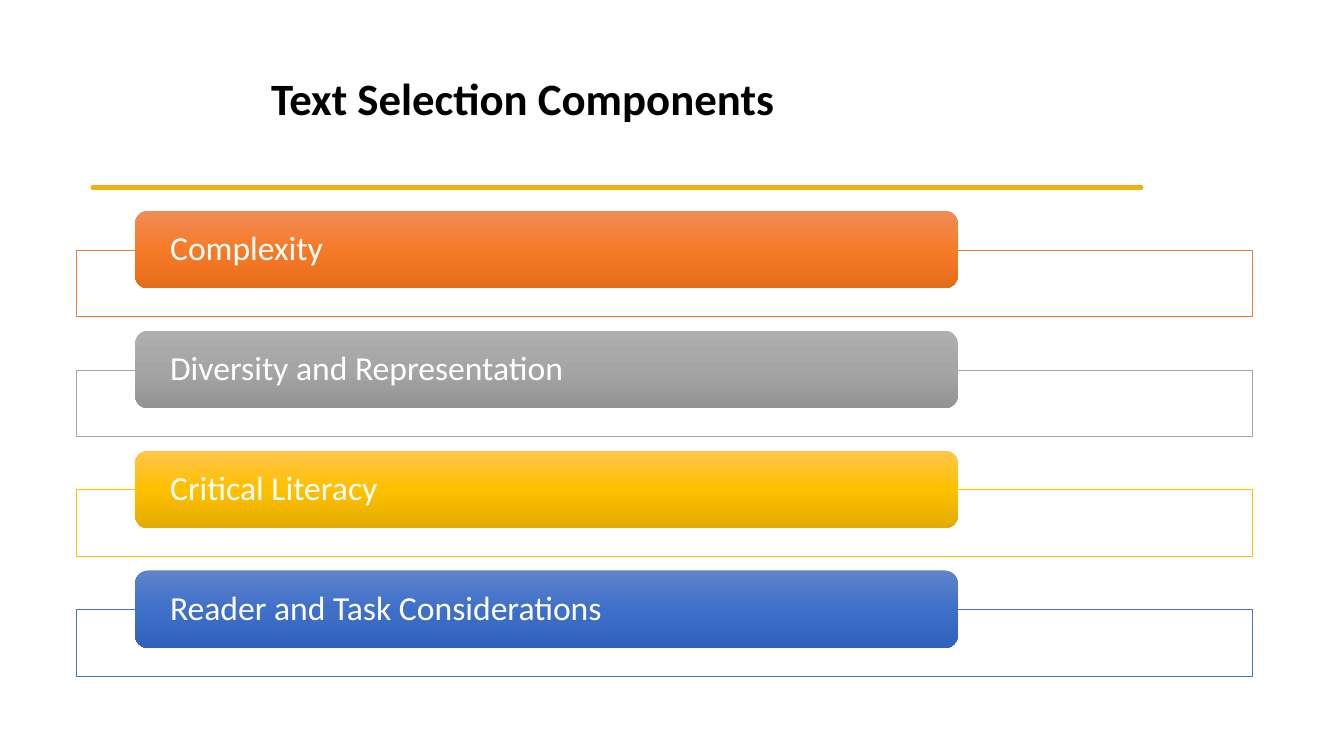
"""Build the Text Selection Components slide."""
import copy
import lxml.etree
import pptx
import pptx.util
import pptx.dml.color
import pptx.enum.shapes
import pptx.enum.text
import pptx.oxml.ns

Inches = pptx.util.Inches
Pt = pptx.util.Pt
RGBColor = pptx.dml.color.RGBColor
Shape = pptx.enum.shapes.MSO_SHAPE
Anchor = pptx.enum.text.MSO_ANCHOR
Align = pptx.enum.text.PP_ALIGN
qn = pptx.oxml.ns.qn

BLACK = RGBColor(0x00, 0x00, 0x00)
WHITE = RGBColor(0xFF, 0xFF, 0xFF)
GOLD = RGBColor(0xEE, 0xB1, 0x11)
ORANGE = RGBColor(0xED, 0x7D, 0x31)
GRAY = RGBColor(0xA5, 0xA5, 0xA5)
YELLOW = RGBColor(0xFF, 0xC0, 0x00)
BLUE = RGBColor(0x44, 0x72, 0xC4)
ORANGES = [RGBColor(0xF1, 0x8C, 0x57), RGBColor(0xF6, 0x7B, 0x28), RGBColor(0xE5, 0x6C, 0x19)]
GRAYS = [RGBColor(0xAF, 0xAF, 0xAF), GRAY, RGBColor(0x93, 0x93, 0x93)]
YELLOWS = [RGBColor(0xFF, 0xC6, 0x4B), YELLOW, RGBColor(0xE3, 0xAB, 0x00)]
BLUES = [RGBColor(0x61, 0x83, 0xCB), RGBColor(0x3E, 0x70, 0xCA), RGBColor(0x30, 0x62, 0xBB)]

ITEMS = [
    ("Complexity", ORANGE, ORANGES),
    ("Diversity and Representation", GRAY, GRAYS),
    ("Critical Literacy", YELLOW, YELLOWS),
    ("Reader and Task Considerations", BLUE, BLUES),
]
TOP = 2.09
STEP = 1.19


def write(frame, text, size, color, bold=False):
    frame.word_wrap = True
    frame.vertical_anchor = Anchor.MIDDLE
    para = frame.paragraphs[0]
    para.text = text
    para.alignment = Align.LEFT
    para.line_spacing = 0.9
    para.font.name = "Calibri"
    para.font.size = Pt(size)
    para.font.bold = bold
    para.font.color.rgb = color


deck = pptx.Presentation()
deck.slide_width = Inches(13.33)
deck.slide_height = Inches(7.5)
slide = deck.slides.add_slide(deck.slide_layouts[6])
shapes = slide.shapes

rule = shapes.add_connector(
    pptx.enum.shapes.MSO_CONNECTOR.STRAIGHT,
    Inches(0.92), Inches(1.86), Inches(11.32), Inches(1.86))
rule.line.color.rgb = GOLD
rule.line.width = Pt(3)
props = rule._element.spPr
props.find(qn("a:ln")).set("cap", "rnd")
lxml.etree.SubElement(props, qn("a:effectLst"))

title = shapes.add_textbox(Inches(2.59), Inches(0.28), Inches(8.63), Inches(1.45))
write(title.text_frame, "Text Selection Components", 32, BLACK, True)

for row, (label, edge, shades) in enumerate(ITEMS):
    top = TOP + row * STEP
    box = shapes.add_shape(
        Shape.RECTANGLE, Inches(0.76), Inches(top + 0.39), Inches(11.66), Inches(0.66))
    box.shadow.inherit = False
    box.fill.solid()
    box.fill.fore_color.rgb = WHITE
    box.line.color.rgb = edge
    box.line.width = Pt(0.5)

    bar = shapes.add_shape(
        Shape.ROUNDED_RECTANGLE, Inches(1.34), Inches(top), Inches(8.16), Inches(0.77))
    bar.shadow.inherit = False
    bar.line.fill.background()
    bar.fill.gradient()
    bar.fill.gradient_angle = 270
    stops = bar._element.spPr.find(qn("a:gradFill")).find(qn("a:gsLst"))
    stops.insert(1, copy.deepcopy(stops[0]))
    for stop, shade, place in zip(bar.fill.gradient_stops, shades, (0, 0.5, 1)):
        stop.color.rgb = shade
        stop.position = place

    frame = bar.text_frame
    frame.margin_left = frame.margin_right = Inches(0.31)
    frame.margin_top = frame.margin_bottom = 0
    write(frame, label, 24, WHITE)

deck.save("out.pptx")
